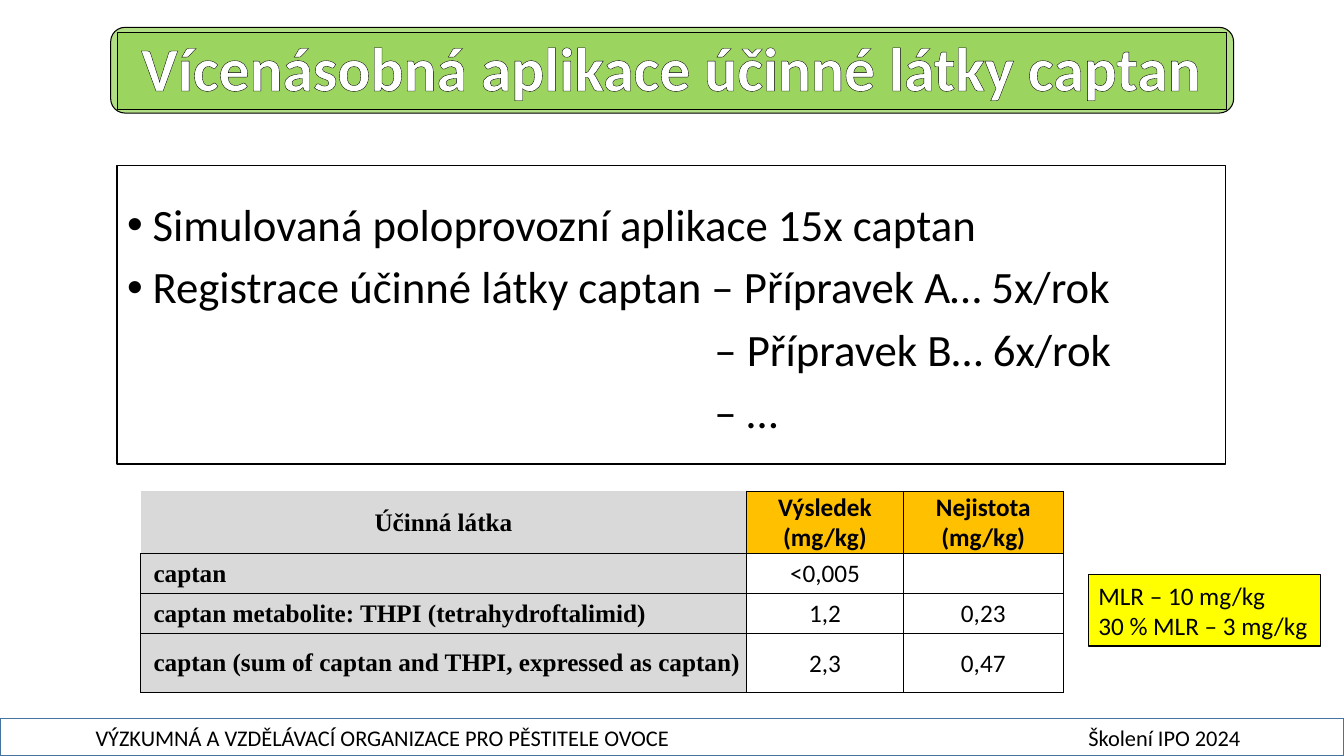
from dataclasses import dataclass
from typing import Optional

import pptx
import pptx.dml.color
import pptx.enum.shapes
import pptx.enum.text
import pptx.oxml
import pptx.oxml.ns
import pptx.util
from lxml import etree

Cm, Pt = pptx.util.Cm, pptx.util.Pt
RGB = pptx.dml.color.RGBColor
ALIGN = pptx.enum.text.PP_ALIGN
MIDDLE = pptx.enum.text.MSO_ANCHOR.MIDDLE
SHAPE = pptx.enum.shapes.MSO_SHAPE
qn = pptx.oxml.ns.qn


@dataclass(frozen=True)
class Theme:
    sans: str = "Calibri"
    serif: str = "Times New Roman"
    black: str = "000000"
    white: str = "FFFFFF"
    green: str = "92D050"
    grey: str = "D9D9D9"
    orange: str = "FFC000"
    yellow: str = "FFFF00"
    blue: str = "43739E"
    title: int = 44
    body: int = 32
    small: int = 18
    footer: int = 16
    opacity: int = 70


@dataclass(frozen=True)
class Box:
    left: float
    top: float
    width: float
    height: float

    def lengths(self) -> tuple:
        return Cm(self.left), Cm(self.top), Cm(self.width), Cm(self.height)


@dataclass(frozen=True)
class Point:
    text: str
    margin: float
    bullet: bool = False


@dataclass(frozen=True)
class Column:
    width: float
    header: str
    header_fill: str
    body_fill: str
    font: str
    align: ALIGN
    indent: float
    bold: bool


THEME = Theme()
BULLET_INDENT, PRODUCT_INDENT = 0.64, 14.8

POINTS = [
    Point("Simulovaná poloprovozní aplikace 15x captan", BULLET_INDENT, True),
    Point("Registrace účinné látky captan – Přípravek A… 5x/rok", BULLET_INDENT, True),
    Point("– Přípravek B… 6x/rok", PRODUCT_INDENT),
    Point("– …", PRODUCT_INDENT),
]
COLUMNS = [
    Column(15.29, "Účinná látka", THEME.grey, THEME.grey, THEME.serif, ALIGN.LEFT, 0.34, True),
    Column(3.94, "Výsledek (mg/kg)", THEME.orange, THEME.white, THEME.sans, ALIGN.CENTER, 0.03, False),
    Column(4.04, "Nejistota (mg/kg)", THEME.orange, THEME.white, THEME.sans, ALIGN.CENTER, 0.03, False),
]
RESULTS = [
    ("captan", "<0,005", ""),
    ("captan metabolite: THPI (tetrahydroftalimid)", "1,2", "0,23"),
    ("captan (sum of captan and THPI, expressed as captan)", "2,3", "0,47"),
]
ROW_HEIGHTS = [1.5, 1.0, 1.0, 1.5]


def place(shape, box: Box) -> None:
    shape.left, shape.top, shape.width, shape.height = box.lengths()


def paint(shape, fill: str, line: str, weight: float, opacity: Optional[int] = None) -> None:
    shape.fill.solid()
    shape.fill.fore_color.rgb = RGB.from_string(fill)
    shape.line.color.rgb = RGB.from_string(line)
    shape.line.width = Pt(weight)
    if opacity is not None:
        color = shape.fill._xPr.find(qn("a:solidFill"))[0]
        etree.SubElement(color, qn("a:alpha"), val=str(opacity * 1000))


def style(paragraph, size: int, font: str = THEME.sans, color: str = THEME.black,
          bold: bool = False, align: ALIGN = ALIGN.LEFT) -> None:
    paragraph.alignment = align
    paragraph.font.size = Pt(size)
    paragraph.font.name = font
    paragraph.font.bold = bold
    paragraph.font.color.rgb = RGB.from_string(color)


def add_box(slide, kind: SHAPE, box: Box, fill: str, line: str, weight: float,
            opacity: Optional[int] = None):
    shape = slide.shapes.add_shape(kind, *box.lengths())
    shape.shadow.inherit = False
    paint(shape, fill, line, weight, opacity)
    return shape


def add_line(parent, tag: str, color: str, weight: float) -> None:
    line = etree.SubElement(parent, qn(tag), w=str(Pt(weight)))
    fill = etree.SubElement(line, qn("a:solidFill"))
    etree.SubElement(fill, qn("a:srgbClr"), val=color)


def draw_title(slide) -> None:
    title = slide.shapes.title
    banner = add_box(slide, SHAPE.ROUNDED_RECTANGLE, Box(2.79, 0.69, 28.3, 2.16),
                     THEME.green, THEME.black, 0.75, THEME.opacity)
    title._element.addprevious(banner._element)
    place(title, Box(2.95, 0.81, 27.97, 1.96))
    paint(title, THEME.green, THEME.black, 0.75, THEME.opacity)
    frame = title.text_frame
    frame.text = "Vícenásobná aplikace účinné látky captan"
    frame.word_wrap = False
    frame.auto_size = pptx.enum.text.MSO_AUTO_SIZE.NONE
    frame.vertical_anchor = MIDDLE
    heading = frame.paragraphs[0]
    heading.line_spacing = 0.9
    style(heading, THEME.title, color=THEME.white, bold=True, align=ALIGN.CENTER)
    add_line(heading.runs[0]._r.get_or_add_rPr(), "a:ln", THEME.black, 0.75)


def draw_points(slide) -> None:
    body = slide.placeholders[1]
    place(body, Box(2.95, 4.17, 27.94, 7.52))
    paint(body, THEME.white, THEME.black, 1)
    frame = body.text_frame
    frame.auto_size = pptx.enum.text.MSO_AUTO_SIZE.NONE
    frame.margin_top = Cm(0.94)
    for index, point in enumerate(POINTS):
        paragraph = frame.add_paragraph() if index else frame.paragraphs[0]
        paragraph.text = point.text
        paragraph.line_spacing = 0.9
        paragraph.space_before = Pt(10 if index else 0)
        properties = paragraph._p.get_or_add_pPr()
        properties.set("marL", str(Cm(point.margin)))
        properties.set("indent", str(-Cm(point.margin) if point.bullet else 0))
        if point.bullet:
            etree.SubElement(properties, qn("a:buFont"), typeface="Arial")
            etree.SubElement(properties, qn("a:buChar"), char="•")
        else:
            etree.SubElement(properties, qn("a:buNone"))
        style(paragraph, THEME.body)


def fill_cell(cell, text: str, column: Column, header: bool) -> None:
    cell.text = text
    cell.vertical_anchor = MIDDLE
    cell.margin_left = Cm(0.03 if header else column.indent)
    cell.margin_right = cell.margin_top = Cm(0.03)
    cell.margin_bottom = 0
    style(cell.text_frame.paragraphs[0], THEME.small, column.font,
          bold=header or column.bold, align=ALIGN.CENTER if header else column.align)
    open_corner = header and column is COLUMNS[0]
    for side in ("a:lnR", "a:lnB") if open_corner else ("a:lnL", "a:lnR", "a:lnT", "a:lnB"):
        add_line(cell._tc.get_or_add_tcPr(), side, THEME.black, 0.5)
    cell.fill.solid()
    cell.fill.fore_color.rgb = RGB.from_string(column.header_fill if header else column.body_fill)


def draw_results(slide) -> None:
    area = Box(3.53, 12.37, sum(c.width for c in COLUMNS), sum(ROW_HEIGHTS))
    rows = [tuple(c.header for c in COLUMNS), *RESULTS]
    table = slide.shapes.add_table(len(rows), len(COLUMNS), *area.lengths()).table
    table.first_row = table.horz_banding = False
    for index, column in enumerate(COLUMNS):
        table.columns[index].width = Cm(column.width)
    for r, values in enumerate(rows):
        table.rows[r].height = Cm(ROW_HEIGHTS[r])
        for c, (column, text) in enumerate(zip(COLUMNS, values)):
            fill_cell(table.cell(r, c), text, column, r == 0)


def draw_limits(slide) -> None:
    limits = add_box(slide, SHAPE.RECTANGLE, Box(27.43, 14.48, 5.84, 1.8),
                     THEME.yellow, THEME.black, 0.75)
    frame = limits.text_frame
    frame.text = "MLR – 10 mg/kg\n30 % MLR – 3 mg/kg"
    frame.word_wrap = False
    for paragraph in frame.paragraphs:
        style(paragraph, THEME.small)


def draw_footer(slide) -> None:
    footer = add_box(slide, SHAPE.RECTANGLE, Box(0, 18.11, 33.87, 0.94),
                     THEME.white, THEME.blue, 1)
    frame = footer.text_frame
    frame.margin_left, frame.margin_right = Cm(2.41), 0
    frame.vertical_anchor = MIDDLE
    frame.text = "VÝZKUMNÁ A VZDĚLÁVACÍ ORGANIZACE PRO PĚSTITELE OVOCE\tŠkolení IPO 2024"
    paragraph = frame.paragraphs[0]
    tabs = etree.SubElement(paragraph._p.get_or_add_pPr(), qn("a:tabLst"))
    etree.SubElement(tabs, qn("a:tab"), pos=str(Cm(25.02)), algn="l")
    style(paragraph, THEME.footer)


def main() -> None:
    deck = pptx.Presentation()
    deck.slide_width, deck.slide_height = Cm(33.87), Cm(19.05)
    slide = deck.slides.add_slide(deck.slide_layouts[1])
    for draw in (draw_title, draw_points, draw_results, draw_limits, draw_footer):
        draw(slide)
    deck.save("out.pptx")


if __name__ == "__main__":
    main()
